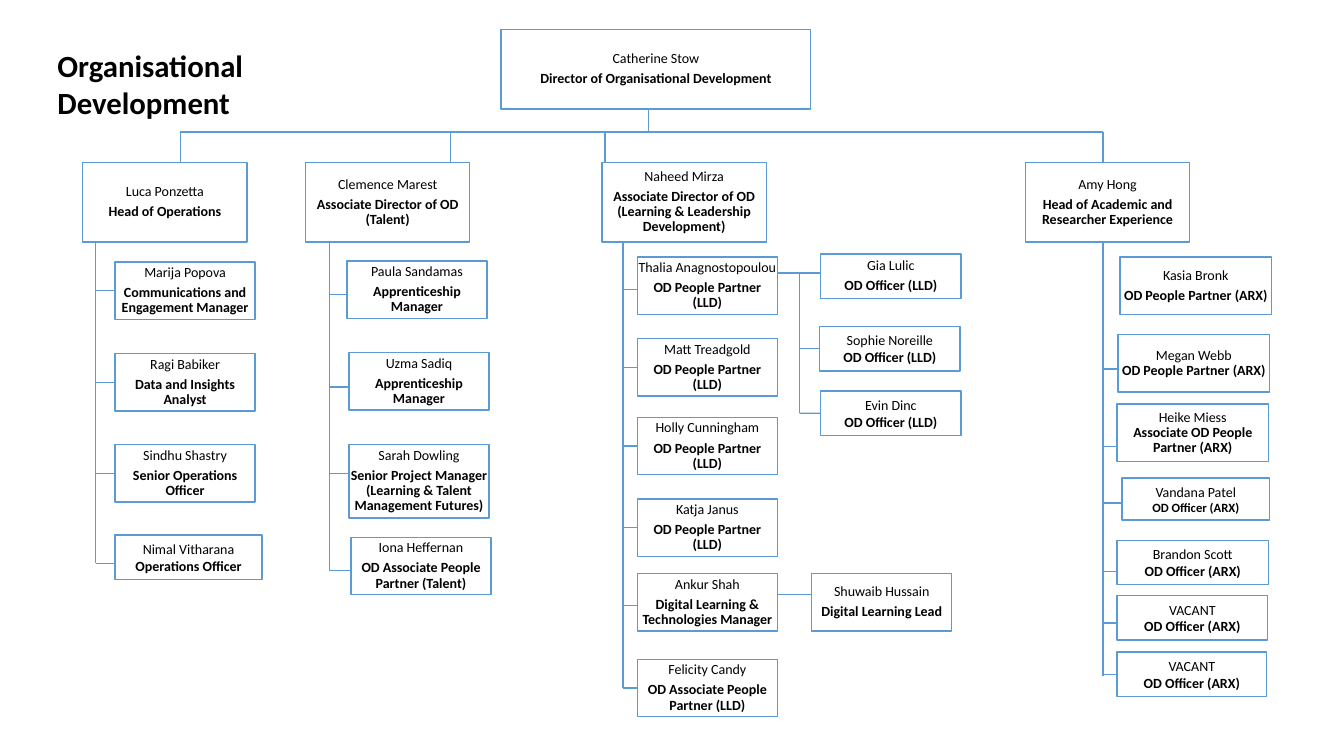
from lxml.etree import SubElement
from pptx import Presentation
from pptx.dml.color import RGBColor
from pptx.enum.shapes import MSO_CONNECTOR, MSO_SHAPE
from pptx.enum.text import MSO_ANCHOR, PP_ALIGN
from pptx.oxml.ns import qn
from pptx.util import Inches, Pt

BLUE, BLACK = "5B9BD5", "000000"
BUS = 1.31
JOIN = 0.025
# Text looks: line spacing, gap after the name, size of the role
LOOSE, FLUSH = (0.9, 3.5, 10), (0.9, 0, 10)
PLAIN, SMALL = (1.0, 0, 10), (1.0, 0, 9)


def paint(target, color):
    target.rgb = RGBColor.from_string(color)


def style(font, size, bold):
    for key, value in {"name": "Calibri", "size": Pt(size), "bold": bold}.items():
        setattr(font, key, value)
    paint(font.color, BLACK)


def wire(slide, x1, y1, x2, y2):
    line = slide.shapes.add_connector(
        MSO_CONNECTOR.STRAIGHT, Inches(x1), Inches(y1), Inches(x2), Inches(y2))
    line.line.width = Pt(1)
    paint(line.line.color, BLUE)
    SubElement(line._element.spPr, qn("a:effectLst"))
    return line


def card(slide, box, name, role, look=LOOSE):
    shape = slide.shapes.add_shape(MSO_SHAPE.RECTANGLE, *map(Inches, box))
    shape.shadow.inherit = False
    shape.fill.background()
    shape.line.width = Pt(1)
    paint(shape.line.color, BLUE)
    frame = shape.text_frame
    frame.word_wrap = True
    frame.vertical_anchor = MSO_ANCHOR.MIDDLE
    for side in ("left", "right", "top", "bottom"):
        setattr(frame, "margin_" + side, Inches(0.01))
    pitch, gap, size = look
    for i, (text, points) in enumerate([(name, 10), (role, size)]):
        para = frame.add_paragraph() if i else frame.paragraphs[0]
        para.alignment = PP_ALIGN.CENTER
        para.line_spacing = pitch
        para.space_after = Pt(gap)
        run = para.add_run()
        run.text = text
        style(run.font, points, bool(i))
    return shape


def stub(slide, x, y, shape, box):
    """Line from the rail to a card's left side, joined if it meets the middle."""
    left, top, _, high = box
    mid = top + high / 2
    near = abs(mid - y) < JOIN
    if near:
        y = mid
    line = wire(slide, x, y, left, y)
    if near:
        line.end_connect(shape, 1)


def branch(slide, box, rail, start, end, staff):
    """Rail and cards; every place is an offset from the left top of box.

    Each of staff is dx, dy, width, height, stub dy or None, name, role, look.
    """
    left, top = box[:2]
    x = left + rail
    wire(slide, x, top + start, x, top + end)
    for dx, dy, wide, high, at, *text in staff:
        place = (left + dx, top + dy, wide, high)
        shape = card(slide, place, *text)
        if at is not None:
            stub(slide, x, top + at, shape, place)


def team(slide, box, drop, name, role, rail, end, staff):
    """A lead under the bus line with the staff below."""
    left, top, _, high = box
    wire(slide, left + drop, BUS, left + drop, top)
    card(slide, box, name, role)
    branch(slide, box, rail, high, end, staff)


def heading(slide, box, text):
    title = slide.shapes.title
    title.left, title.top, title.width, title.height = map(Inches, box)
    frame = title.text_frame
    frame.word_wrap = True
    frame.vertical_anchor = MSO_ANCHOR.TOP
    para = frame.paragraphs[0]
    para.alignment = PP_ALIGN.LEFT
    run = para.add_run()
    run.text = text
    style(run.font, 22, True)


def director(slide, box):
    left, top, _, high = box
    card(slide, box, "Catherine Stow", "Director of Organisational Development")
    wire(slide, left + 1.46, top + high, left + 1.46, BUS)
    wire(slide, 1.79, BUS, 10.94, BUS)


W, H, LOW = 1.39, 0.57, 0.44
OPS = [
    (0.32, 0.99, W, H, 1.28, "Marija Popova", "Communications and Engagement Manager"),
    (0.32, 1.9, W, H, 2.2, "Ragi Babiker", "Data and Insights Analyst"),
    (0.32, 2.8, W, H, 3.09, "Sindhu Shastry", "Senior Operations Officer"),
    (0.32, 3.7, 1.46, LOW, 3.98, "Nimal Vitharana", "Operations Officer", PLAIN),
]
TALENT = [
    (0.41, 0.98, W, H, 1.31, "Paula Sandamas", "Apprenticeship Manager"),
    (0.43, 1.89, W, H, 2.23, "Uzma Sadiq", "Apprenticeship Manager"),
    (0.43, 2.8, W, 0.73, 3.09, "Sarah Dowling",
     "Senior Project Manager (Learning & Talent Management Futures)"),
    (0.45, 3.72, W, H, 4.05, "Iona Heffernan", "OD Associate People Partner (Talent)"),
]
LLD = [
    (0.35, 0.94, W, H, 1.26, "Thalia Anagnostopoulou", "OD People Partner (LLD)"),
    (0.35, 1.75, W, H, 2.06, "Matt Treadgold", "OD People Partner (LLD)"),
    (0.35, 2.53, W, H, 2.82, "Holly Cunningham", "OD People Partner (LLD)"),
    (0.35, 3.34, W, H, 3.64, "Katja Janus", "OD People Partner (LLD)"),
    (0.35, 4.08, W, H, 4.4, "Ankur Shah", "Digital Learning & Technologies Manager"),
    (0.35, 4.93, W, H, 5.22, "Felicity Candy", "OD Associate People Partner (LLD)"),
]
ARX = [
    (0.94, 0.94, 1.5, H, None, "Kasia Bronk", "OD People Partner (ARX)"),
    (0.92, 1.71, 1.5, H, 2.05, "Megan Webb", "OD People Partner (ARX)", FLUSH),
    (0.91, 2.4, 1.5, H, 2.82, "Heike Miess", "Associate OD People Partner (ARX)", FLUSH),
    (0.96, 3.13, 1.46, 0.42, 3.38, "Vandana Patel", "OD Officer (ARX)", SMALL),
    (0.91, 3.75, 1.5, LOW, 4.06, "Brandon Scott", "OD Officer (ARX)", PLAIN),
    (0.91, 4.3, 1.49, LOW, 4.57, "VACANT", "OD Officer (ARX)", PLAIN),
    (0.91, 4.86, 1.48, LOW, 5.1, "VACANT", "OD Officer (ARX)", PLAIN),
]
AIDES = [
    (1.82, -0.03, W, LOW, 0.16, "Gia Lulic", "OD Officer (LLD)"),
    (1.81, 0.69, W, LOW, 0.91, "Sophie Noreille", "OD Officer (LLD)", PLAIN),
    (1.82, 1.33, W, LOW, 1.55, "Evin Dinc", "OD Officer (LLD)", PLAIN),
]
# Left, drop, name, role, rail, rail end, staff
TEAMS = [
    (0.82, 0.97, "Luca Ponzetta", "Head of Operations", 0.13, 3.98, OPS),
    (3.03, 1.44, "Clemence Marest", "Associate Director of OD (Talent)",
     0.24, 4.05, TALENT),
    (5.97, 0.03, "Naheed Mirza",
     "Associate Director of OD (Learning & Leadership Development)", 0.21, 5.22, LLD),
    (10.17, 0.77, "Amy Hong", "Head of Academic and Researcher Experience",
     0.77, 5.1, ARX),
]


def aides(slide, box):
    """Officers to the right of the first learning partner's box."""
    left, top, wide, _ = box
    wire(slide, left + wide, top + 0.16, left + 1.61, top + 0.16)
    branch(slide, box, 1.61, 0.16, 1.55, AIDES)


def digital(slide, box):
    """Digital lead to the right of the technologies manager's box."""
    left, top, wide, high = box
    place = (left + 1.73, top, wide, high)
    shape = card(slide, place, "Shuwaib Hussain", "Digital Learning Lead")
    stub(slide, left + wide, top + 0.21, shape, place)


def main():
    deck = Presentation()
    deck.slide_width, deck.slide_height = Inches(13.33), Inches(7.5)
    slide = deck.slides.add_slide(deck.slide_layouts[5])
    heading(slide, (0.47, 0.41, 2.92, 0.84), "Organisational Development")
    director(slide, (4.97, 0.29, 3.07, 0.79))
    for left, *rest in TEAMS:
        team(slide, (left, 1.61, 1.63, 0.79), *rest)
    aides(slide, (6.32, 2.55, W, H))
    digital(slide, (6.32, 5.69, W, H))
    deck.save("out.pptx")


if __name__ == "__main__":
    main()
